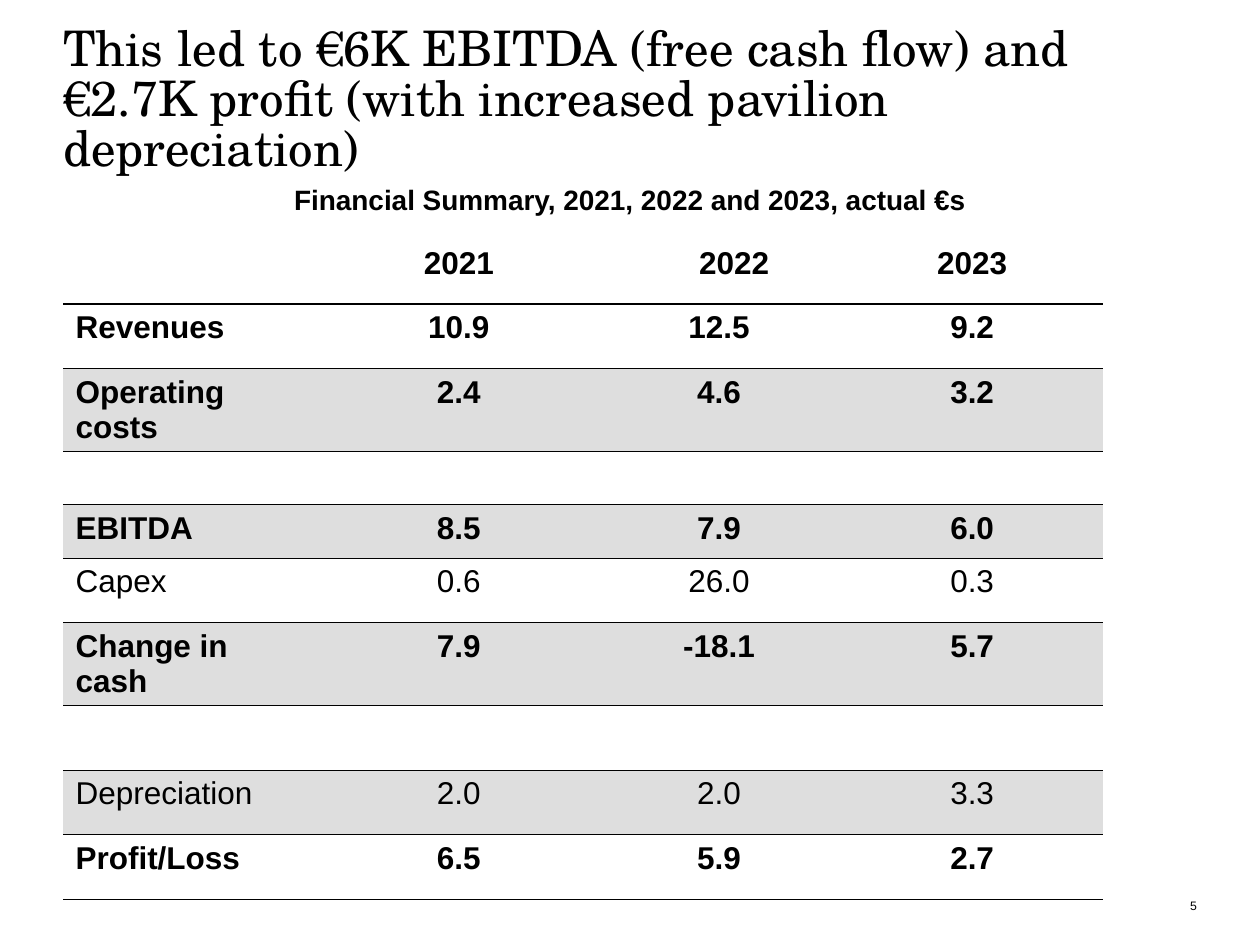
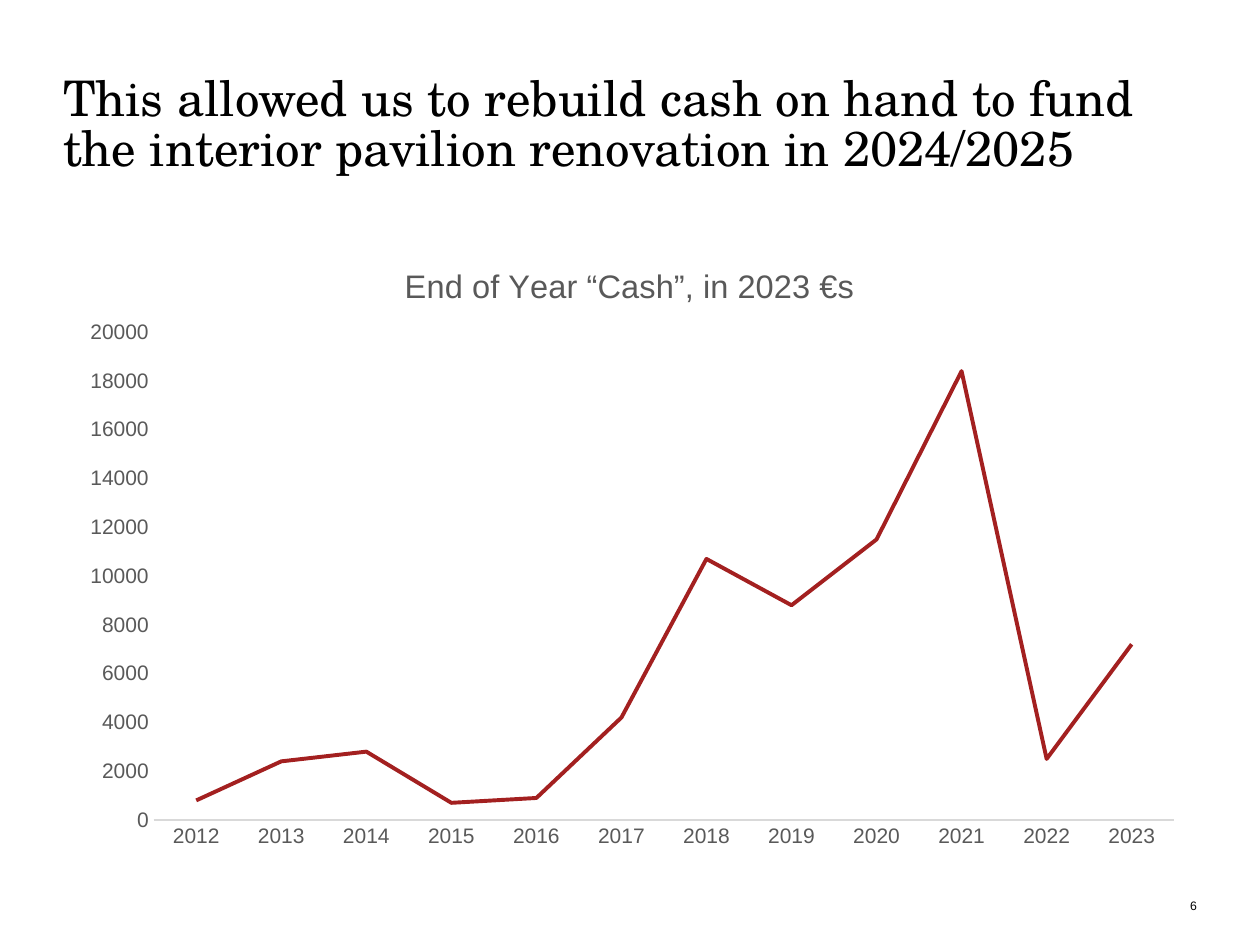
from dataclasses import dataclass

import lxml.etree
import pptx
import pptx.chart.data
import pptx.dml.color
import pptx.enum.chart
import pptx.enum.text
import pptx.oxml
import pptx.oxml.ns
import pptx.util

Cm = pptx.util.Cm
Pt = pptx.util.Pt
ALIGN = pptx.enum.text.PP_ALIGN
ANCHOR = pptx.enum.text.MSO_ANCHOR


@dataclass(frozen=True)
class Theme:
    ink: str = "000000"
    band: str = "DEDEDE"
    chart_text: str = "595959"
    axis_line: str = "D9D9D9"
    series: str = "A32020"
    title_font: str = "TeX Gyre Schola"
    body_font: str = "Arial"
    title_size: float = 28
    subtitle_size: float = 16
    table_size: float = 18
    chart_title_size: float = 18.6
    axis_size: float = 12
    page_size: float = 7
    rule: float = 0.5
    header_rule: float = 1.5
    margin: float = 1.27
    content_width: float = 22.86
    content_top: float = 4.83


def rgb(color):
    return pptx.dml.color.RGBColor.from_string(color)


class Deck:
    def __init__(self, theme):
        self.theme = theme
        self.presentation = pptx.Presentation()
        self.presentation.slide_width = Cm(25.4)
        self.presentation.slide_height = Cm(19.05)
        self.slide = None

    def style(self, font, size, color=None, name=None, bold=False):
        font.size = Pt(size)
        font.name = name or self.theme.body_font
        font.bold = bold
        font.color.rgb = rgb(color or self.theme.ink)

    def add_text_run(self, frame, text, size, align=ALIGN.LEFT, name=None, bold=False):
        paragraph = frame.paragraphs[0]
        paragraph.alignment = align
        run = paragraph.add_run()
        run.text = text
        self.style(run.font, size, name=name, bold=bold)
        return paragraph

    def prepare(self, frame, anchor):
        frame.word_wrap = True
        frame.auto_size = pptx.enum.text.MSO_AUTO_SIZE.NONE
        frame.vertical_anchor = anchor
        frame.margin_left = frame.margin_right = 0
        frame.margin_top = frame.margin_bottom = 0

    def start_slide(self, title, page_number):
        theme = self.theme
        layout = self.presentation.slide_layouts.get_by_name("Title Only")
        self.slide = self.presentation.slides.add_slide(layout)
        shape = self.slide.shapes.title
        shape.left, shape.top = Cm(theme.margin), Cm(1.27)
        shape.width, shape.height = Cm(theme.content_width), Cm(2.29)
        self.prepare(shape.text_frame, ANCHOR.BOTTOM)
        paragraph = self.add_text_run(shape.text_frame, title, theme.title_size,
                                      name=theme.title_font)
        paragraph.line_spacing = 0.85
        self.text(str(page_number), 19.56, 18.03, 4.57, 0.38, theme.page_size,
                  ALIGN.RIGHT, ANCHOR.BOTTOM)

    def text(self, text, left, top, width, height, size, align, anchor=ANCHOR.TOP, bold=False):
        shape = self.slide.shapes.add_textbox(Cm(left), Cm(top), Cm(width), Cm(height))
        self.prepare(shape.text_frame, anchor)
        self.add_text_run(shape.text_frame, text, size, align, bold=bold)

    def subtitle(self, text):
        theme = self.theme
        self.text(text, theme.margin, 3.68, theme.content_width, 0.89,
                  theme.subtitle_size, ALIGN.CENTER, bold=True)

    def border(self, cell, top, bottom):
        properties = cell._tc.get_or_add_tcPr()
        for tag, width in (("a:lnL", 0), ("a:lnR", 0), ("a:lnT", top), ("a:lnB", bottom)):
            line = lxml.etree.SubElement(properties, pptx.oxml.ns.qn(tag), w=str(Pt(width)))
            kind = "a:solidFill" if width else "a:noFill"
            fill = lxml.etree.SubElement(line, pptx.oxml.ns.qn(kind))
            if width:
                lxml.etree.SubElement(fill, pptx.oxml.ns.qn("a:srgbClr"), val=self.theme.ink)

    def table(self, rows, widths, heights, plain_rows):
        theme = self.theme
        table = self.slide.shapes.add_table(
            len(rows), len(widths), Cm(theme.margin), Cm(theme.content_top),
            Cm(sum(widths)), Cm(sum(heights))).table
        table.first_row = table.horz_banding = False
        for column, width in zip(table.columns, widths):
            column.width = Cm(width)
        for row, height in zip(table.rows, heights):
            row.height = Cm(height)
        for row_index, values in enumerate(rows):
            top = {0: 0, 1: theme.header_rule}.get(row_index, theme.rule)
            bottom = theme.rule if row_index else theme.header_rule
            banded = row_index > 0 and row_index % 2 == 0
            for column_index, value in enumerate(values):
                cell = table.cell(row_index, column_index)
                self.border(cell, top, bottom)
                if banded:
                    cell.fill.solid()
                    cell.fill.fore_color.rgb = rgb(theme.band)
                else:
                    cell.fill.background()
                if value:
                    align = ALIGN.CENTER if column_index else ALIGN.LEFT
                    self.add_text_run(cell.text_frame, value, theme.table_size, align,
                                      bold=values[0] not in plain_rows)
        return table

    def line_chart(self, title, series_name, categories, values):
        theme = self.theme
        data = pptx.chart.data.CategoryChartData()
        data.categories = categories
        data.add_series(series_name, values)
        chart = self.slide.shapes.add_chart(
            pptx.enum.chart.XL_CHART_TYPE.LINE, Cm(theme.margin), Cm(theme.content_top),
            Cm(theme.content_width), Cm(12.45), data).chart
        self.style(chart.font, theme.axis_size, theme.chart_text)
        chart.has_legend = False
        run = chart.chart_title.text_frame.paragraphs[0].add_run()
        run.text = title
        self.style(run.font, theme.chart_title_size, theme.chart_text)
        chart.plots[0].vary_by_categories = False
        series = chart.plots[0].series[0]
        series.smooth = False
        series.marker.style = pptx.enum.chart.XL_MARKER_STYLE.NONE
        series.format.line.color.rgb = rgb(theme.series)
        series.format.line.width = Pt(2.25)
        for axis in (chart.category_axis, chart.value_axis):
            axis.has_major_gridlines = False
            axis.major_tick_mark = axis.minor_tick_mark = pptx.enum.chart.XL_TICK_MARK.NONE
            self.style(axis.tick_labels.font, theme.axis_size, theme.chart_text)
        chart.category_axis.format.line.color.rgb = rgb(theme.axis_line)
        chart.category_axis.format.line.width = Pt(0.75)
        chart.value_axis.format.line.fill.background()
        chart.value_axis.minimum_scale = 0
        chart.value_axis.maximum_scale = 20000
        chart.value_axis.major_unit = 2000
        self.place_plot(chart, x=0.08, y=0.15, w=0.9, h=0.79)

    def place_plot(self, chart, **fractions):
        qn = pptx.oxml.ns.qn
        plot_area = chart.element.find(".//" + qn("c:plotArea"))
        layout = plot_area.find(qn("c:layout"))
        if layout is None:
            layout = pptx.oxml.parse_xml(f"<c:layout {pptx.oxml.ns.nsdecls('c')}/>")
            plot_area.insert(0, layout)
        manual = lxml.etree.SubElement(layout, qn("c:manualLayout"))
        settings = {"layoutTarget": "inner", "xMode": "edge", "yMode": "edge", **fractions}
        for tag, value in settings.items():
            lxml.etree.SubElement(manual, qn("c:" + tag), val=str(value))


def add_financial_summary(deck):
    deck.start_slide("This led to €6K EBITDA (free cash flow) and €2.7K profit "
                     "(with increased pavilion depreciation)", 5)
    deck.subtitle("Financial Summary, 2021, 2022 and 2023, actual €s")
    blank_row = ("", "", "", "", "")
    rows = [
        ("", "2021", "2022", "", "2023"),
        ("Revenues", "10.9", "12.5", "", "9.2"),
        ("Operating costs", "2.4", "4.6", "", "3.2"),
        blank_row,
        ("EBITDA", "8.5", "7.9", "", "6.0"),
        ("Capex", "0.6", "26.0", "", "0.3"),
        ("Change in cash", "7.9", "-18.1", "", "5.7"),
        blank_row,
        ("Depreciation", "2.0", "2.0", "", "3.3"),
        ("Profit/Loss", "6.5", "5.9", "", "2.7"),
    ]
    heights = [1.07 if index in (3, 4) else 1.3 for index in range(len(rows))]
    table = deck.table(rows, (4.6, 6.76, 3.73, 0.58, 5.26), heights, ("Capex", "Depreciation"))
    table.cell(0, 2).merge(table.cell(0, 3))


def add_cash_history(deck):
    deck.start_slide("This allowed us to rebuild cash on hand to fund the interior "
                     "pavilion renovation in 2024/2025", 6)
    cash = (800, 2400, 2800, 700, 900, 4200, 10700, 8800, 11500, 18400, 2500, 7200)
    years = [str(year) for year in range(2012, 2024)]
    deck.line_chart("End of Year “Cash”, in 2023 €s", "Series 1", years, cash)


def main():
    deck = Deck(Theme())
    add_financial_summary(deck)
    add_cash_history(deck)
    deck.presentation.save("out.pptx")


if __name__ == "__main__":
    main()
